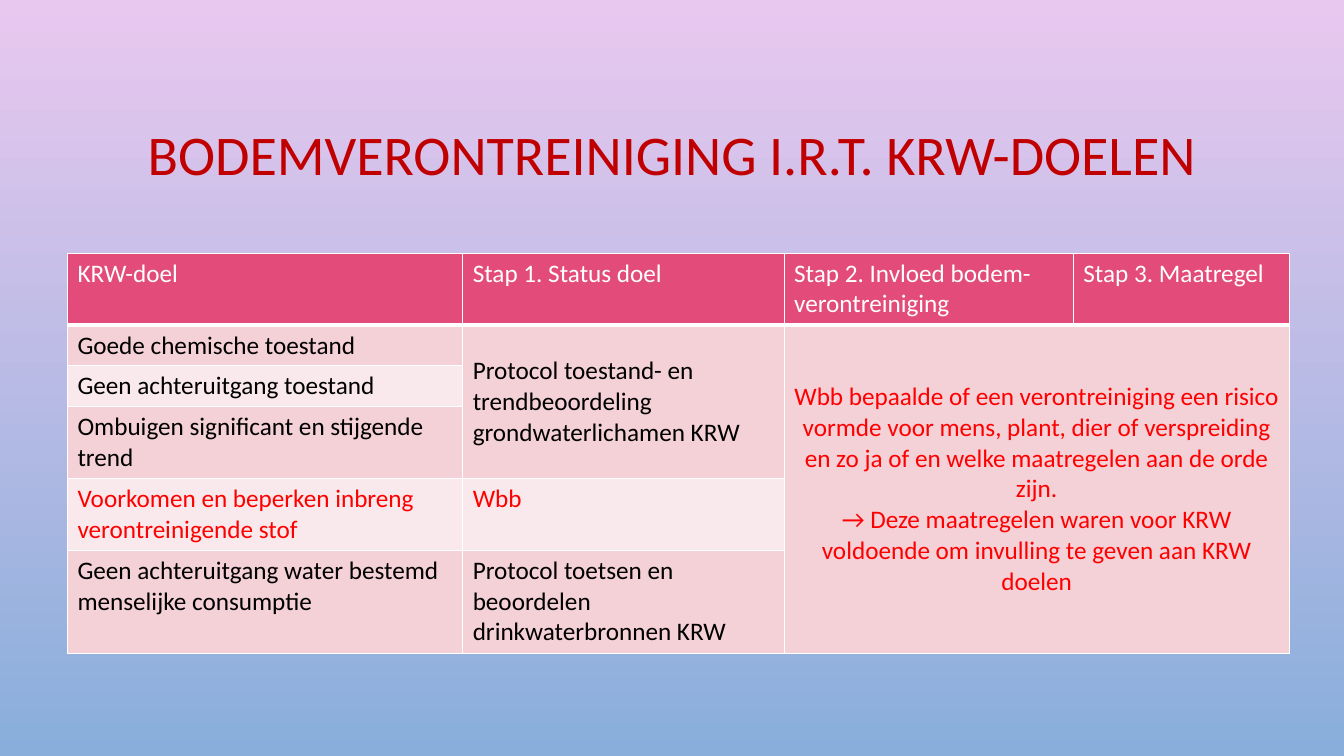
from dataclasses import dataclass

from lxml import etree
from pptx import Presentation
from pptx.dml.color import RGBColor
from pptx.enum.text import MSO_ANCHOR, PP_ALIGN
from pptx.oxml.ns import qn
from pptx.util import Cm, Pt

TOP, MIDDLE = MSO_ANCHOR.TOP, MSO_ANCHOR.MIDDLE
LEFT, CENTER = PP_ALIGN.LEFT, PP_ALIGN.CENTER
FONT = "Calibri"
COLORS = {
    "sky": "E9C8EF",
    "sea": "89AEDB",
    "title": "C00000",
    "head": "E34B7A",
    "band": "F4D0D7",
    "pale": "FAE9EC",
    "white": "FFFFFF",
    "black": "000000",
    "red": "FF0000",
}
WIDTHS = (9.96, 8.1, 7.29, 5.44)
LINES = (2, 1, 1, 2, 2, 3)


@dataclass
class Entry:
    row: int
    col: int
    text: str
    color: str = "black"
    rows: int = 1
    cols: int = 1
    anchor: MSO_ANCHOR = TOP
    align: PP_ALIGN = LEFT


HEADS = (
    "KRW-doel",
    "Stap 1. Status doel",
    "Stap 2. Invloed bodem-verontreiniging",
    "Stap 3. Maatregel",
)
ENTRIES = [Entry(0, col, text, "white") for col, text in enumerate(HEADS)] + [
    Entry(1, 0, "Goede chemische toestand"),
    Entry(2, 0, "Geen achteruitgang toestand"),
    Entry(3, 0, "Ombuigen significant en stijgende trend"),
    Entry(4, 0, "Voorkomen en beperken inbreng verontreinigende stof", "red"),
    Entry(5, 0, "Geen achteruitgang water bestemd menselijke consumptie"),
    Entry(1, 1, "Protocol toestand- en trendbeoordeling grondwaterlichamen KRW",
          rows=3, anchor=MIDDLE),
    Entry(4, 1, "Wbb", "red"),
    Entry(5, 1, "Protocol toetsen en beoordelen drinkwaterbronnen KRW"),
    Entry(1, 2,
          "Wbb bepaalde of een verontreiniging een risico vormde voor mens, plant, "
          "dier of verspreiding en zo ja of en welke maatregelen aan de orde zijn.\n"
          "→ Deze maatregelen waren voor KRW voldoende om invulling te geven aan "
          "KRW doelen",
          "red", 5, 2, MIDDLE, CENTER),
]


def rgb(name: str) -> RGBColor:
    return RGBColor.from_string(COLORS[name])


def style(frame, size: int, color: str, align: PP_ALIGN) -> None:
    for para in frame.paragraphs:
        para.alignment = align
        for run in para.runs:
            run.font.name = FONT
            run.font.size = Pt(size)
            run.font.bold = False
            run.font.color.rgb = rgb(color)


def paint(slide) -> None:
    fill = slide.background.fill
    fill.gradient()
    fill.gradient_angle = 270
    for stop, place, name in zip(fill.gradient_stops, (0, 1), ("sky", "sea")):
        stop.position = place
        stop.color.rgb = rgb(name)


def add_title(slide) -> None:
    box = slide.shapes.add_textbox(Cm(2.54), Cm(1.73), Cm(28.78), Cm(4.45))
    frame = box.text_frame
    frame.word_wrap = True
    frame.vertical_anchor = MIDDLE
    frame.text = "BODEMVERONTREINIGING I.R.T. KRW-DOELEN"
    frame.paragraphs[0].line_spacing = 0.9
    style(frame, 40, "title", CENTER)


def border(cell, base: int) -> None:
    props = cell._tc.get_or_add_tcPr()
    for side, width in (("L", 1), ("R", 1), ("T", 1), ("B", base)):
        line = etree.SubElement(props, qn(f"a:ln{side}"), w=str(Pt(width)))
        solid = etree.SubElement(line, qn("a:solidFill"))
        etree.SubElement(solid, qn("a:srgbClr"), val=COLORS["white"])


def add_grid(slide) -> None:
    heights = [0.25 + 0.78 * count for count in LINES]
    grid = slide.shapes.add_table(
        len(LINES), len(WIDTHS), Cm(1.7), Cm(6.38),
        Cm(sum(WIDTHS)), Cm(sum(heights))).table
    for col, width in zip(grid.columns, WIDTHS):
        col.width = Cm(width)
    for index, (row, height) in enumerate(zip(grid.rows, heights)):
        row.height = Cm(height)
        tint = "head" if index == 0 else "band" if index % 2 else "pale"
        for cell in row.cells:
            border(cell, 3 if index == 0 else 1)
            cell.fill.solid()
            cell.fill.fore_color.rgb = rgb(tint)
    for entry in ENTRIES:
        cell = grid.cell(entry.row, entry.col)
        if entry.rows > 1 or entry.cols > 1:
            cell.merge(grid.cell(entry.row + entry.rows - 1,
                                 entry.col + entry.cols - 1))
        cell.vertical_anchor = entry.anchor
        cell.text_frame.text = entry.text
        style(cell.text_frame, 18, entry.color, entry.align)


def main() -> None:
    deck = Presentation()
    deck.slide_width, deck.slide_height = Cm(33.87), Cm(19.05)
    slide = deck.slides.add_slide(deck.slide_layouts[6])
    paint(slide)
    add_title(slide)
    add_grid(slide)
    deck.save("out.pptx")


if __name__ == "__main__":
    main()
